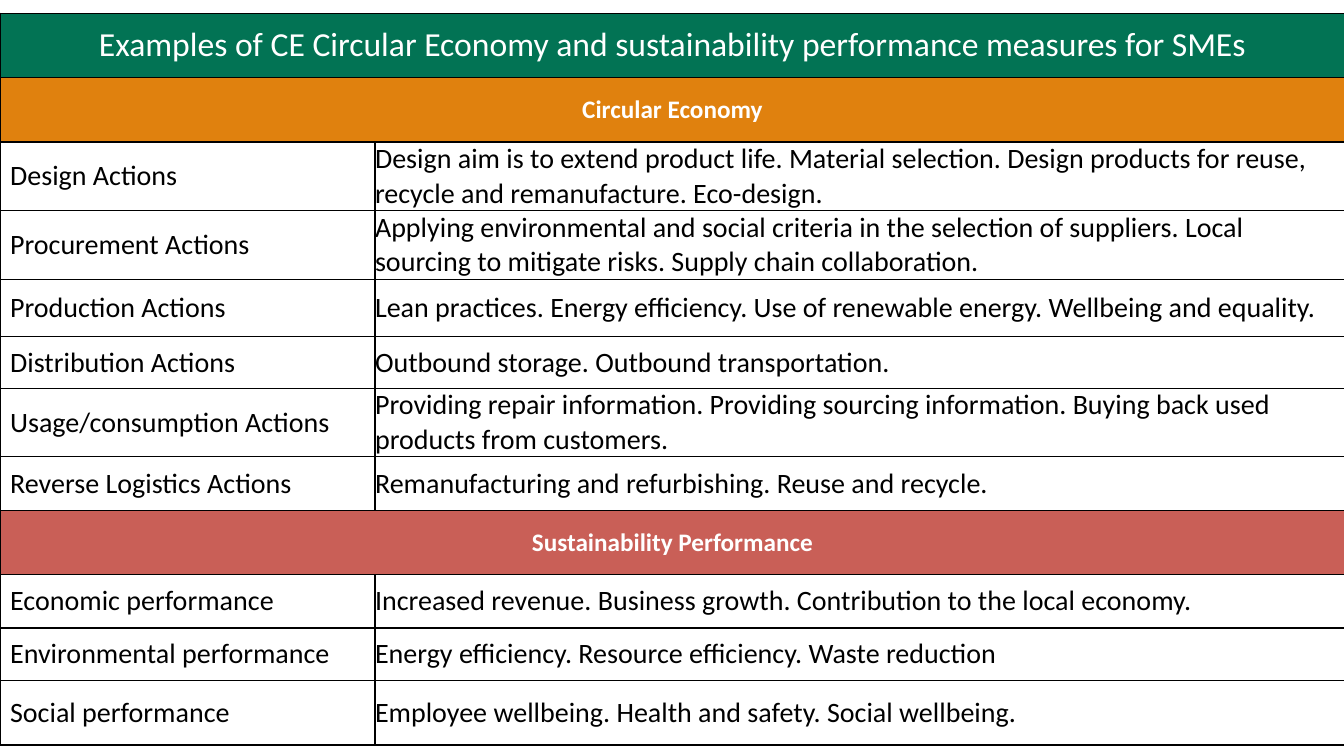
from dataclasses import dataclass

from lxml import etree
from pptx import Presentation
from pptx import util as u
from pptx.dml.color import RGBColor
from pptx.enum import text
from pptx.oxml import ns


@dataclass(frozen=True)
class Theme:
    font: str = "Calibri"
    green: str = "027354"
    orange: str = "E0810E"
    red: str = "C95F57"
    white: str = "FFFFFF"
    black: str = "000000"
    title_size: int = 24
    section_size: int = 18
    body_size: int = 20
    border_width: int = 1


THEME = Theme()
COLUMN_WIDTHS = (3.72, 9.62)
TABLE_TOP, TABLE_HEIGHT = 0.13, 7.25
BAND_HEIGHT = 0.64

TITLE = "Examples of CE Circular Economy and sustainability performance measures for SMEs"
# Each section: heading, band colour, and rows of (height, label, measures)
SECTIONS = [
    ("Circular Economy", THEME.orange, [
        (0.54, "Design Actions",
         "Design aim is to extend product life. Material selection. "
         "Design products for reuse, recycle and remanufacture. Eco-design."),
        (0.55, "Procurement Actions",
         "Applying environmental and social criteria in the selection of suppliers. "
         "Local sourcing to mitigate risks. Supply chain collaboration."),
        (0.57, "Production Actions",
         "Lean practices. Energy efficiency. Use of renewable energy. Wellbeing and equality."),
        (0.51, "Distribution Actions", "Outbound storage. Outbound transportation."),
        (0.64, "Usage/consumption Actions",
         "Providing repair information. Providing sourcing information. "
         "Buying back used products from customers."),
        (0.53, "Reverse Logistics Actions",
         "Remanufacturing and refurbishing. Reuse and recycle."),
    ]),
    ("Sustainability Performance", THEME.red, [
        (0.53, "Economic performance",
         "Increased revenue. Business growth. Contribution to the local economy."),
        (0.52, "Environmental performance",
         "Energy efficiency. Resource efficiency. Waste reduction"),
        (0.64, "Social performance",
         "Employee wellbeing. Health and safety. Social wellbeing."),
    ]),
]


class SlideBuilder:
    def __init__(self, page, theme):
        self.page = page
        self.theme = theme

    def table(self, row_count):
        frame = self.page.shapes.add_table(
            row_count, len(COLUMN_WIDTHS), 0, u.Inches(TABLE_TOP),
            u.Inches(sum(COLUMN_WIDTHS)), u.Inches(TABLE_HEIGHT))
        for column, width in zip(frame.table.columns, COLUMN_WIDTHS):
            column.width = u.Inches(width)
        return frame

    def borders(self, cell):
        """Line all four sides; the lines must precede the cell's fill."""
        properties = cell._tc.get_or_add_tcPr()
        for index, side in enumerate(("lnL", "lnR", "lnT", "lnB")):
            line = etree.Element(ns.qn(f"a:{side}"), w=str(u.Pt(self.theme.border_width)))
            fill = etree.SubElement(line, ns.qn("a:solidFill"))
            etree.SubElement(fill, ns.qn("a:srgbClr"), val=self.theme.black)
            properties.insert(index, line)

    def cell(self, cell, wording, fill, color, size, bold=False, centred=False):
        cell.fill.solid()
        cell.fill.fore_color.rgb = RGBColor.from_string(fill)
        cell.vertical_anchor = text.MSO_ANCHOR.MIDDLE
        cell.text_frame.text = wording
        para = cell.text_frame.paragraphs[0]
        para.alignment = text.PP_ALIGN.CENTER if centred else text.PP_ALIGN.LEFT
        for span in para.runs:
            span.font.name = self.theme.font
            span.font.size = u.Pt(size)
            span.font.bold = bold
            span.font.color.rgb = RGBColor.from_string(color)

    def band(self, row, wording, fill, size, bold):
        row.height = u.Inches(BAND_HEIGHT)
        first, last = row.cells
        first.merge(last)
        self.cell(first, wording, fill, self.theme.white, size, bold, centred=True)

    def measure_row(self, row, height, label, measures):
        row.height = u.Inches(height)
        for cell, wording in zip(row.cells, (label, measures)):
            self.cell(cell, wording, self.theme.white, self.theme.black, self.theme.body_size)
        cell.margin_left = cell.margin_right = cell.margin_top = cell.margin_bottom = 0


def main():
    deck = Presentation()
    deck.slide_width, deck.slide_height = u.Inches(13.33), u.Inches(7.5)
    builder = SlideBuilder(deck.slides.add_slide(deck.slide_layouts[6]), THEME)

    frame = builder.table(1 + sum(1 + len(rows) for _, _, rows in SECTIONS))
    table_rows = iter(frame.table.rows)
    builder.band(next(table_rows), TITLE, THEME.green, THEME.title_size, bold=False)
    for heading, color, rows in SECTIONS:
        builder.band(next(table_rows), heading, color, THEME.section_size, bold=True)
        for entry in rows:
            builder.measure_row(next(table_rows), *entry)
    for cell in frame.table.iter_cells():
        builder.borders(cell)
    frame.height = u.Inches(TABLE_HEIGHT)

    deck.save("out.pptx")


if __name__ == "__main__":
    main()
